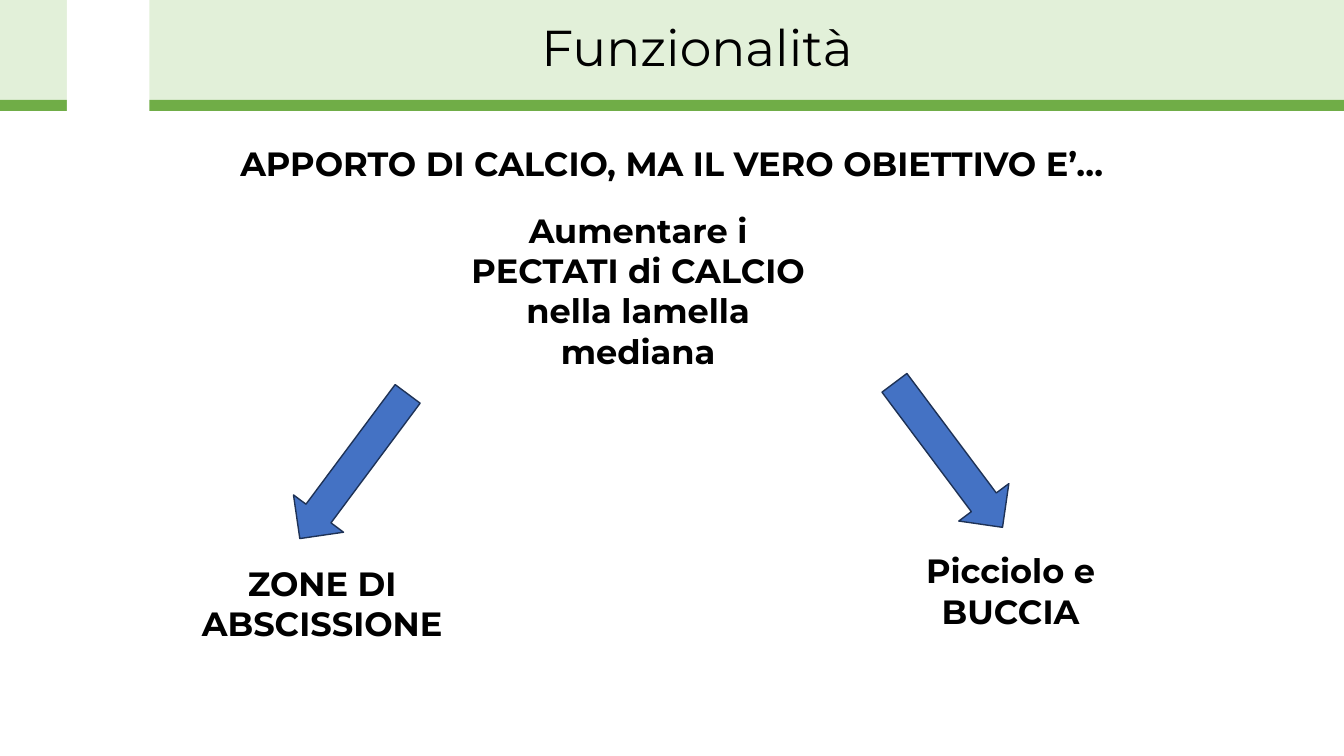
from pptx import Presentation
from pptx.dml.color import RGBColor as Rgb
from pptx.enum.shapes import MSO_SHAPE as Shape
from pptx.enum.text import MSO_ANCHOR as Anchor, PP_ALIGN as Align
from pptx.util import Pt

SIZE = (960, 540)
TITLE = ("Funzionalità", (120.25, 7.2, 755.3, 56.9))
BANDS = [
    ((0, 0, 960, 71.3), "pale"),
    ((0, 71.3, 960, 7.9), "green"),
    ((47.7, 0, 59, 79.2), "white"),
]
TEXTS = [
    (["APPORTO DI CALCIO, MA IL VERO OBIETTIVO E’…"], (39.6, 98.6, 880.6, 36)),
    (["Aumentare i", "PECTATI di CALCIO nella lamella mediana"],
     (316.1, 146.2, 279.4, 123.8)),
    (["ZONE DI ABSCISSIONE"], (135.4, 398.2, 189.4, 65.5)),
    (["Picciolo e BUCCIA"], (609.1, 389.5, 225.4, 94.3)),
]
ARROWS = [
    ((230.4, 268.6, 44.6, 128.9), 36.7),
    ((655.2, 260.6, 44.6, 128.9), -36.8),
]
THEME = {
    "pale": Rgb.from_string("E2F0D9"),
    "green": Rgb.from_string("70AD47"),
    "white": Rgb.from_string("FFFFFF"),
    "blue": Rgb.from_string("4472C4"),
    "edge": Rgb.from_string("1E3256"),
    "ink": Rgb.from_string("000000"),
    "title": {"name": "Montserrat", "size": Pt(36), "bold": False},
    "body": {"name": "Montserrat", "size": Pt(24), "bold": True},
}


def points(box):
    return [Pt(n) for n in box]


def draw(slide, kind, box, fill, edge=None):
    shape = slide.shapes.add_shape(kind, *points(box))
    shape.shadow.inherit = False
    shape.fill.solid()
    shape.fill.fore_color.rgb = THEME[fill]
    if edge:
        shape.line.color.rgb = THEME[edge]
        shape.line.width = Pt(1)
    else:
        shape.line.fill.background()
    return shape


def write(frame, lines, style):
    frame.word_wrap = True
    for i, line in enumerate(lines):
        para = frame.paragraphs[0] if i == 0 else frame.add_paragraph()
        para.alignment = Align.CENTER
        run = para.add_run()
        run.text = line
        for key, value in THEME[style].items():
            setattr(run.font, key, value)
        run.font.color.rgb = THEME["ink"]


def main():
    deck = Presentation()
    deck.slide_width, deck.slide_height = points(SIZE)
    slide = deck.slides.add_slide(deck.slide_layouts[5])

    for box, fill in BANDS:
        draw(slide, Shape.RECTANGLE, box, fill)

    words, box = TITLE
    title = slide.shapes.title
    for key, value in zip(("left", "top", "width", "height"), points(box)):
        setattr(title, key, value)
    write(title.text_frame, [words], "title")
    title.text_frame.vertical_anchor = Anchor.MIDDLE
    title.text_frame.paragraphs[0].line_spacing = 0.9
    title.element.getparent().append(title.element)

    for box, turn in ARROWS:
        arrow = draw(slide, Shape.DOWN_ARROW, box, "blue", "edge")
        arrow.rotation = turn

    for lines, box in TEXTS:
        write(slide.shapes.add_textbox(*points(box)).text_frame, lines, "body")

    deck.save("out.pptx")


if __name__ == "__main__":
    main()
